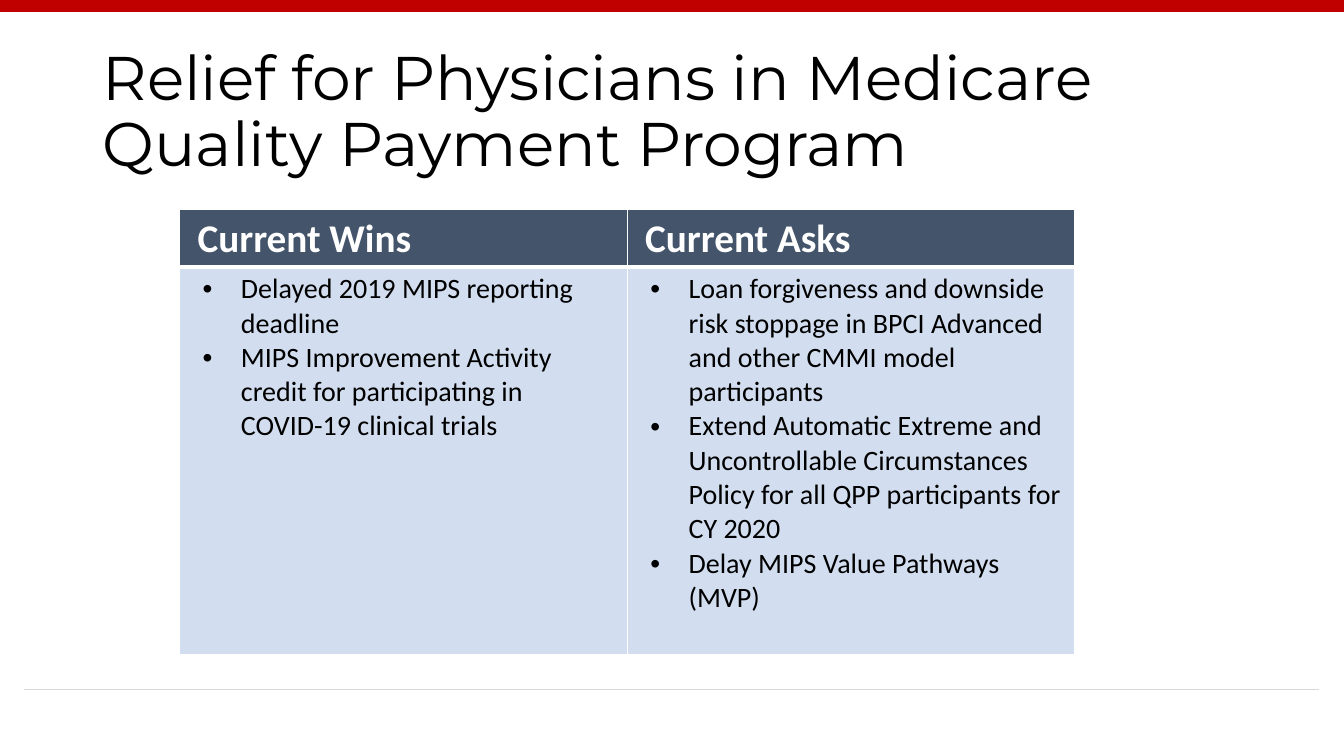
from lxml import etree
from pptx import Presentation
from pptx.dml.color import RGBColor
from pptx.enum.shapes import MSO_CONNECTOR
from pptx.enum.text import MSO_ANCHOR
from pptx.oxml.ns import qn
from pptx.util import Inches, Pt

STRAIGHT = MSO_CONNECTOR.STRAIGHT
MIDDLE = MSO_ANCHOR.MIDDLE

RED = RGBColor(0xC0, 0x00, 0x00)
GREY = RGBColor(0xD9, 0xD9, 0xD9)
BLACK = RGBColor(0x00, 0x00, 0x00)
WHITE = RGBColor(0xFF, 0xFF, 0xFF)
SLATE = RGBColor(0x44, 0x54, 0x6A)
PALE_BLUE = RGBColor(0xD2, 0xDE, 0xEF)

SLIDE_WIDTH = 13.33
TITLE = "Relief for Physicians in Medicare Quality Payment Program"
COLUMNS = [
    ("Current Wins", [
        "Delayed 2019 MIPS reporting deadline",
        "MIPS Improvement Activity credit for participating in COVID-19 clinical trials",
    ]),
    ("Current Asks", [
        "Loan forgiveness and downside risk stoppage in BPCI Advanced and other CMMI model participants",
        "Extend Automatic Extreme and Uncontrollable Circumstances Policy for all QPP participants for CY 2020",
        "Delay MIPS Value Pathways (MVP)",
    ]),
]


def add_rule(slide, left, right, y, color, weight):
    rule = slide.shapes.add_connector(
        STRAIGHT, Inches(left), Inches(y), Inches(right), Inches(y))
    rule.line.color.rgb = color
    rule.line.width = Pt(weight)
    etree.SubElement(rule._element.spPr, qn("a:effectLst"))


def style_font(paragraph, name, size, color, bold=False):
    for run in paragraph.runs:
        run.font.name = name
        run.font.size = Pt(size)
        run.font.color.rgb = color
        run.font.bold = bold


def add_title(slide):
    title = slide.shapes.add_textbox(Inches(0.92), Inches(0.4), Inches(11.5), Inches(1.45))
    frame = title.text_frame
    frame.word_wrap = True
    frame.vertical_anchor = MIDDLE
    frame.text = TITLE
    frame.paragraphs[0].line_spacing = 0.9
    style_font(frame.paragraphs[0], "Montserrat", 44, BLACK)


def style_cell(cell, fill, top, bottom):
    """Set the white borders, then the fill, in the order the schema needs."""
    properties = cell._tc.get_or_add_tcPr()
    for side, weight in (("L", 1), ("R", 1), ("T", top), ("B", bottom)):
        border = etree.SubElement(properties, qn(f"a:ln{side}"), w=str(Pt(weight)))
        solid = etree.SubElement(border, qn("a:solidFill"))
        etree.SubElement(solid, qn("a:srgbClr"), val=str(WHITE))
    cell.fill.solid()
    cell.fill.fore_color.rgb = fill


def add_bullet(paragraph):
    properties = paragraph._p.get_or_add_pPr()
    properties.set("marL", str(Inches(0.51)))
    properties.set("indent", str(Inches(-0.38)))
    etree.SubElement(properties, qn("a:buFont"), typeface="Arial")
    etree.SubElement(properties, qn("a:buChar"), char="•")


def fill_header(cell, heading):
    style_cell(cell, SLATE, top=1, bottom=3)
    cell.margin_left = Inches(0.18)
    cell.text_frame.text = heading
    style_font(cell.text_frame.paragraphs[0], "Calibri", 28, WHITE, bold=True)


def fill_body(cell, points):
    style_cell(cell, PALE_BLUE, top=3, bottom=1)
    cell.text_frame.text = "\n".join(points)
    for paragraph in cell.text_frame.paragraphs:
        add_bullet(paragraph)
        style_font(paragraph, "Calibri", 20, BLACK)


def add_wins_and_asks(slide):
    table = slide.shapes.add_table(
        2, len(COLUMNS), Inches(1.78), Inches(2.08), Inches(8.88), Inches(4.41)).table
    table.horz_banding = False
    table.rows[0].height = Inches(0.57)
    table.rows[1].height = Inches(3.84)
    for index, (heading, points) in enumerate(COLUMNS):
        table.columns[index].width = Inches(4.44)
        fill_header(table.cell(0, index), heading)
        fill_body(table.cell(1, index), points)


def main():
    presentation = Presentation()
    presentation.slide_width = Inches(SLIDE_WIDTH)
    presentation.slide_height = Inches(7.5)
    slide = presentation.slides.add_slide(presentation.slide_layouts[6])
    add_rule(slide, 0, SLIDE_WIDTH, 0.06, RED, 9)
    add_rule(slide, 0.24, 13.08, 6.84, GREY, 0.5)
    add_title(slide)
    add_wins_and_asks(slide)
    presentation.save("out.pptx")


if __name__ == "__main__":
    main()
